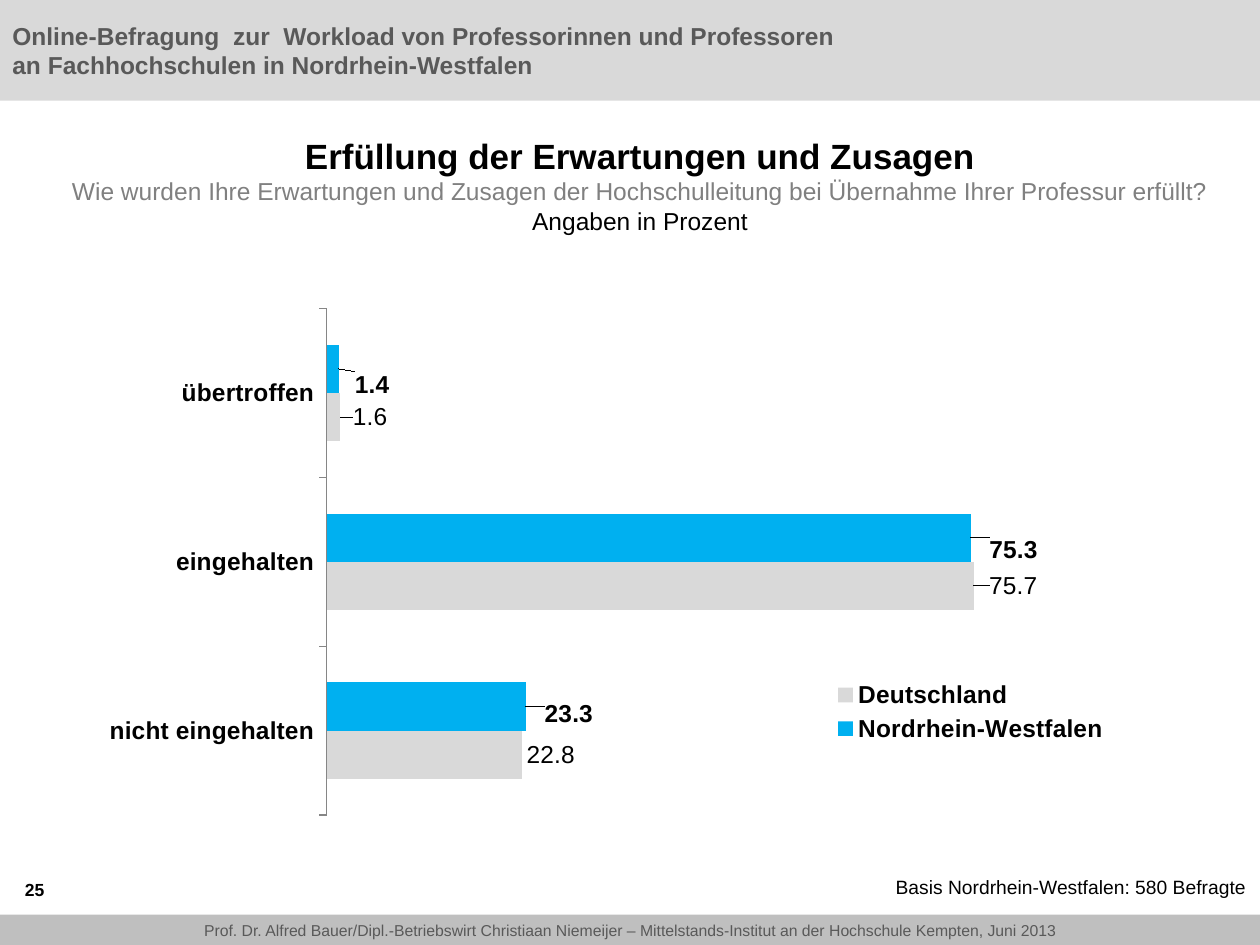
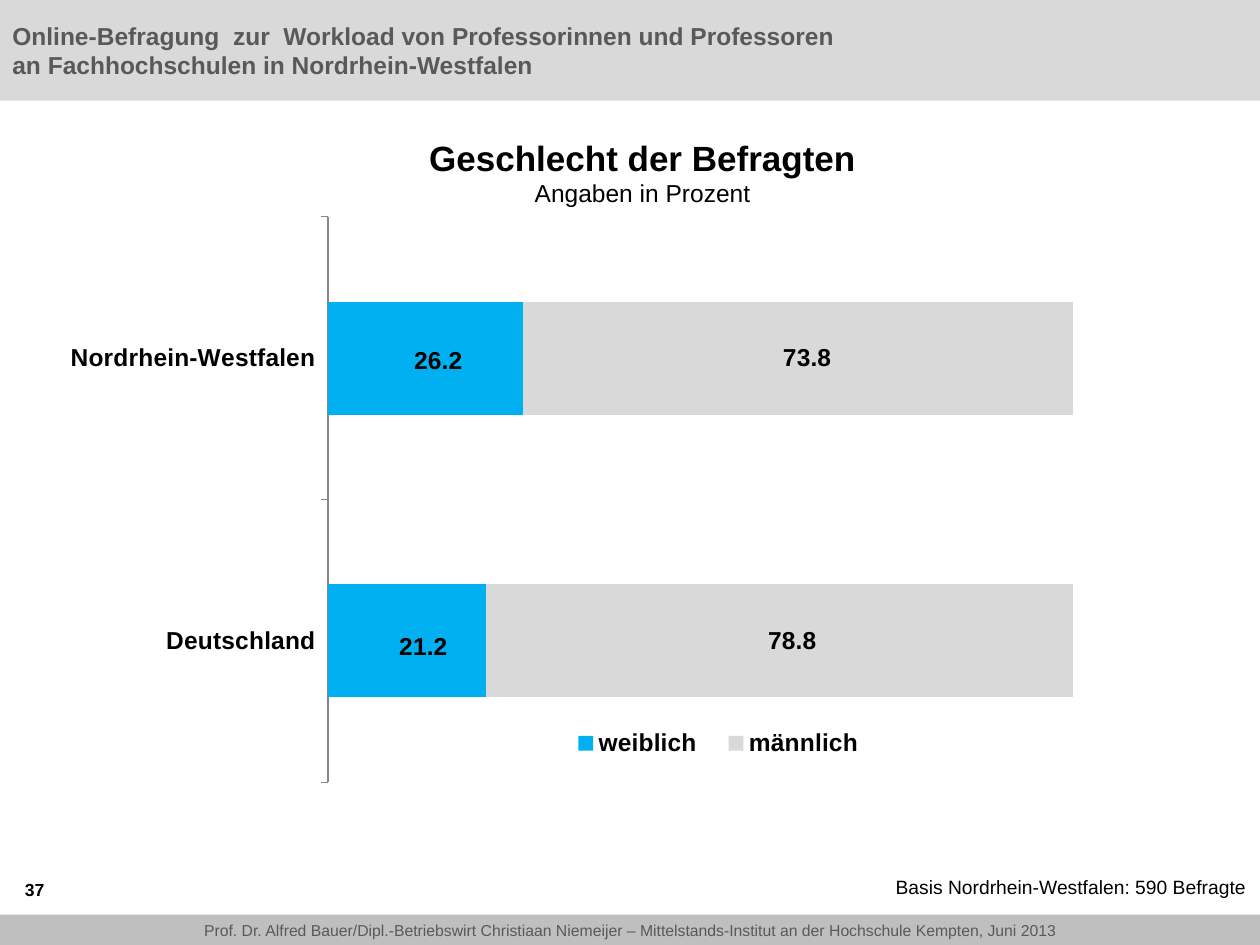
"""Build two survey result slides with shared bands, title style and bar charts."""
from dataclasses import dataclass
from typing import Optional

from lxml.etree import SubElement
from pptx import Presentation
from pptx.chart.data import CategoryChartData
from pptx.dml.color import RGBColor
from pptx.enum.chart import XL_CHART_TYPE as Chart, XL_LABEL_POSITION as LabelPos
from pptx.enum.chart import XL_LEGEND_POSITION as LegendPos, XL_TICK_MARK as Tick
from pptx.enum.shapes import MSO_SHAPE as Shape
from pptx.enum.text import MSO_ANCHOR as Anchor, MSO_AUTO_SIZE as AutoSize, PP_ALIGN as Align
from pptx.oxml.ns import qn
from pptx.util import Inches, Pt

FONT = "Arial"
BLACK, TEXT_GREY, QUESTION_GREY = "000000", "595959", "808080"
BAND_GREY, FOOTER_GREY, AXIS_GREY = "D9D9D9", "BFBFBF", "868686"
BLUE, LIGHT_GREY = "00B0F0", "D9D9D9"
SURVEY = ("Online-Befragung  zur  Workload von Professorinnen und Professoren",
          "an Fachhochschulen in Nordrhein-Westfalen")
AUTHORS = ("Prof. Dr. Alfred Bauer/Dipl.-Betriebswirt Christiaan Niemeijer – "
           "Mittelstands-Institut an der Hochschule Kempten, Juni 2013")


@dataclass(frozen=True)
class Box:
    x: float
    y: float
    w: float
    h: float

    def inches(self) -> tuple:
        return tuple(Inches(v) for v in (self.x, self.y, self.w, self.h))


@dataclass(frozen=True)
class Style:
    size: int
    color: str = BLACK
    bold: bool = False


@dataclass(frozen=True)
class Series:
    name: str
    values: tuple
    color: str
    bold: bool
    label_shifts: tuple


@dataclass(frozen=True)
class BarChart:
    kind: Chart
    box: Box
    plot: Box
    legend: Box
    categories: tuple
    series: tuple
    label_position: LabelPos
    overlap: int = 0
    maximum: Optional[float] = None


@dataclass(frozen=True)
class ResultSlide:
    number: int
    respondents: int
    title_box: Box
    title: tuple
    chart: BarChart


HEADING, PLAIN = Style(20, bold=True), Style(14)
STRONG = Style(14, bold=True)

SLIDES = (
    ResultSlide(
        25, 580, Box(0.4, 1.09, 9.36, 0.75),
        (("Erfüllung der Erwartungen und Zusagen", HEADING),
         ("Wie wurden Ihre Erwartungen und Zusagen der Hochschulleitung "
          "bei Übernahme Ihrer Professur erfüllt?", Style(14, QUESTION_GREY)),
         ("Angaben in Prozent", PLAIN)),
        BarChart(
            Chart.BAR_CLUSTERED, Box(0.87, 2, 8.48, 4.49),
            Box(2.58, 2.45, 5.44, 4.02), Box(6.5, 5.36, 2.4, 0.58),
            ("übertroffen", "eingehalten", "nicht eingehalten"),
            (Series("Nordrhein-Westfalen", (1.4, 75.3, 23.3), BLUE, True,
                    ((0.09, 0.13), (0.11, 0.1), (0.11, 0.06))),
             Series("Deutschland", (1.6, 75.7, 22.8), LIGHT_GREY, False,
                    ((0.06, 0), (0.08, 0), (0, 0)))),
            LabelPos.OUTSIDE_END, maximum=80)),
    ResultSlide(
        37, 590, Box(0.86, 1.1, 8.48, 0.53),
        (("Geschlecht der Befragten", HEADING), ("Angaben in Prozent", PLAIN)),
        BarChart(
            Chart.BAR_STACKED_100, Box(0.56, 1.47, 8.98, 5.01),
            Box(2.6, 1.72, 5.92, 4.49), Box(4.4, 5.72, 2.6, 0.36),
            ("Nordrhein-Westfalen", "Deutschland"),
            (Series("weiblich", (26.2, 21.2), BLUE, True, ((0.1, 0.02), (0.13, 0.05))),
             Series("männlich", (73.8, 78.8), LIGHT_GREY, True, ((0.07, 0), (0.1, 0)))),
            LabelPos.CENTER, overlap=100)),
)


def rgb(color: str) -> RGBColor:
    return RGBColor.from_string(color)


def assign(target, values: dict) -> None:
    for name, value in values.items():
        setattr(target, name, value)


def set_font(font, style: Style) -> None:
    assign(font, {"name": FONT, "size": Pt(style.size), "bold": style.bold})
    font.color.rgb = rgb(style.color)


def set_frame(tf, anchor=Anchor.MIDDLE) -> None:
    assign(tf, {"word_wrap": True, "auto_size": AutoSize.NONE, "vertical_anchor": anchor,
                "margin_top": 0, "margin_bottom": 0})


def write_lines(tf, lines: tuple, style: Style, align=Align.LEFT) -> None:
    set_frame(tf)
    for i, line in enumerate(lines):
        p = tf.add_paragraph() if i else tf.paragraphs[0]
        p.alignment = align
        r = p.add_run()
        r.text = line
        set_font(r.font, style)


def add_text(s, box: Box, text: str, style: Style, align=Align.LEFT) -> None:
    write_lines(s.shapes.add_textbox(*box.inches()).text_frame, (text,), style, align)


def add_band(s, box: Box, color: str, lines: tuple, style: Style, align=Align.LEFT) -> None:
    sp = s.shapes.add_shape(Shape.RECTANGLE, *box.inches())
    sp.shadow.inherit = False
    sp.fill.solid()
    sp.fill.fore_color.rgb = rgb(color)
    sp.line.fill.background()
    write_lines(sp.text_frame, lines, style, align)


def add_title(s, box: Box, lines: tuple) -> None:
    sp = s.shapes.title
    assign(sp, dict(zip(("left", "top", "width", "height"), box.inches())))
    set_frame(sp.text_frame)
    p = sp.text_frame.paragraphs[0]
    p.alignment = Align.CENTER
    for i, (text, style) in enumerate(lines):
        if i:
            p.add_line_break()
        r = p.add_run()
        r.text = text
        set_font(r.font, style)


def set_layout(parent, index: int, settings: dict) -> None:
    for old in parent.findall(qn("c:layout")):
        parent.remove(old)
    layout = SubElement(parent, qn("c:layout"))
    manual = SubElement(layout, qn("c:manualLayout"))
    for tag, value in settings.items():
        SubElement(manual, qn(f"c:{tag}")).set("val", str(value))
    parent.insert(index, layout)


def fractions(inner: Box, outer: Box) -> dict:
    return {"xMode": "edge", "yMode": "edge",
            "x": (inner.x - outer.x) / outer.w, "y": (inner.y - outer.y) / outer.h,
            "w": inner.w / outer.w, "h": inner.h / outer.h}


def format_axes(chart, maximum: Optional[float]) -> None:
    axis = chart.category_axis
    assign(axis, {"reverse_order": True, "major_tick_mark": Tick.OUTSIDE,
                  "has_major_gridlines": False})
    axis.format.line.color.rgb = rgb(AXIS_GREY)
    set_font(axis.tick_labels.font, STRONG)
    assign(chart.value_axis, {"visible": False, "has_major_gridlines": False})
    if maximum is not None:
        assign(chart.value_axis, {"minimum_scale": 0, "maximum_scale": maximum})


def format_series(ser, data: Series, spec_chart: BarChart) -> None:
    ser.format.fill.solid()
    ser.format.fill.fore_color.rgb = rgb(data.color)
    style = Style(14, bold=data.bold)
    labels = ser.data_labels
    assign(labels, {"show_value": True, "number_format": "0.0",
                    "number_format_is_linked": False, "position": spec_chart.label_position})
    set_font(labels.font, style)
    for i, (dx, dy) in enumerate(data.label_shifts):
        if dx or dy:
            label = ser.points[i].data_label
            set_font(label.font, style)
            label.position = spec_chart.label_position


def add_bar_chart(s, data: BarChart) -> None:
    cd = CategoryChartData(number_format="0.0")
    cd.categories = data.categories
    for item in data.series:
        cd.add_series(item.name, item.values)
    chart = s.shapes.add_chart(data.kind, *data.box.inches(), cd).chart
    assign(chart, {"has_title": False, "has_legend": True})
    set_font(chart.font, Style(10))
    assign(chart.legend, {"position": LegendPos.RIGHT, "include_in_layout": False})
    set_font(chart.legend.font, STRONG)
    format_axes(chart, data.maximum)
    plot = chart.plots[0]
    assign(plot, {"gap_width": 150, "overlap": data.overlap, "vary_by_categories": False})
    for ser, item in zip(plot.series, data.series):
        format_series(ser, item, data)

    root = chart.element
    shifts = [shift for item in data.series for shift in item.label_shifts if any(shift)]
    for label, (dx, dy) in zip(root.xpath(".//c:dLbl"), shifts):
        set_layout(label, 1, {"x": dx / data.box.w, "y": dy / data.box.h})
    set_layout(root.xpath(".//c:plotArea")[0], 0,
               {"layoutTarget": "inner", **fractions(data.plot, data.box)})
    set_layout(root.xpath(".//c:legend")[0], 1, fractions(data.legend, data.box))


def add_result_slide(prs, data: ResultSlide) -> None:
    s = prs.slides.add_slide(prs.slide_layouts[5])
    add_band(s, Box(0, 0, 10, 0.8), BAND_GREY, SURVEY, Style(14, TEXT_GREY, True))
    add_band(s, Box(0, 7.26, 10, 0.25), FOOTER_GREY, (AUTHORS,), Style(9, TEXT_GREY),
             Align.CENTER)
    add_title(s, data.title_box, data.title)
    add_text(s, Box(5.97, 6.89, 4.02, 0.29),
             f"Basis Nordrhein-Westfalen: {data.respondents} Befragte", Style(11), Align.RIGHT)
    add_text(s, Box(0.1, 6.86, 2.33, 0.4), str(data.number), Style(10, bold=True))
    add_bar_chart(s, data.chart)


def main() -> None:
    prs = Presentation()
    prs.slide_width, prs.slide_height = Inches(10), Inches(7.5)
    for data in SLIDES:
        add_result_slide(prs, data)
    prs.save("out.pptx")


if __name__ == "__main__":
    main()
